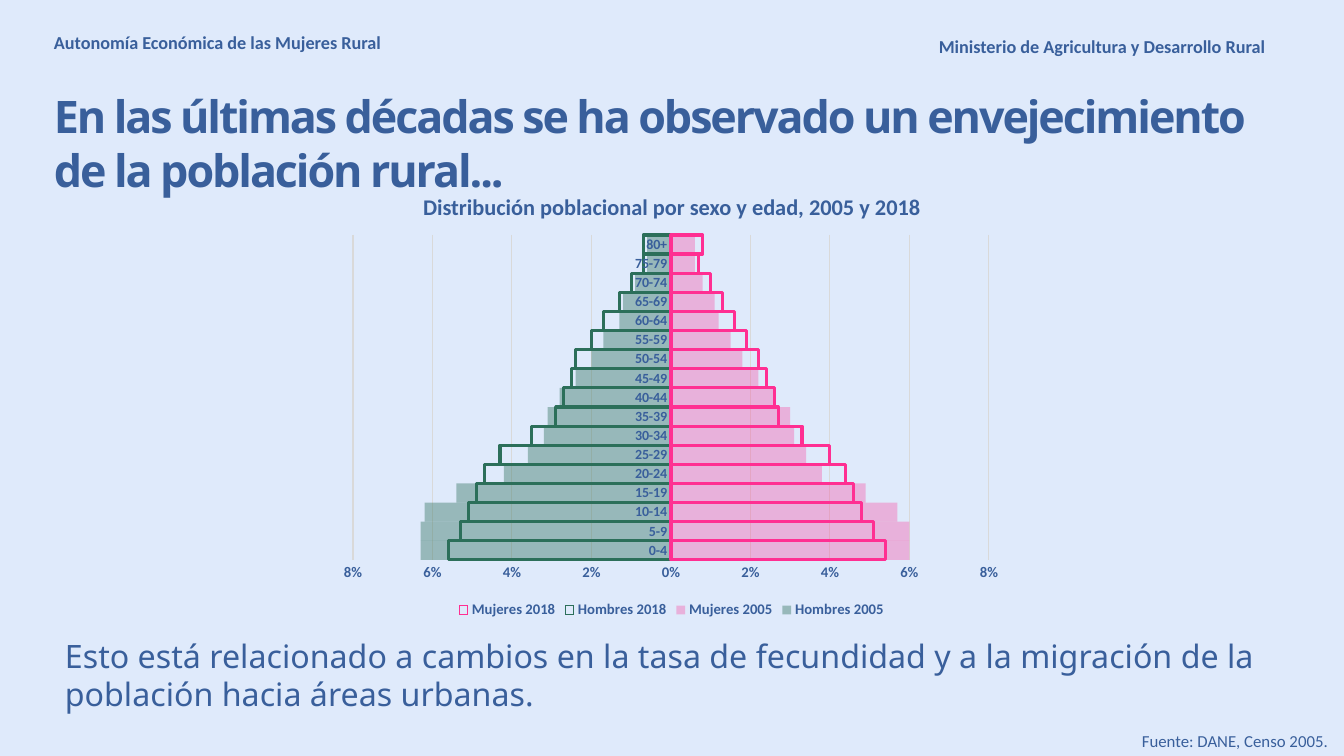
"""Builds a slide with the rural population pyramid for 2005 and 2018."""
from lxml import etree
from pptx import Presentation
from pptx import util as u
from pptx.chart import data as cd
from pptx.dml.color import RGBColor
from pptx.enum import chart as ce, text as te
from pptx.oxml import ns, parse_xml

THEME = {
    "bg": "DFEAFB", "ink": "395F9B", "grid": "D9D9D9", "men": "2C6F5A", "women": "FF2F92",
    "body": "Calibri", "display": "Noto Sans",
    "header": 13, "title": 32, "caption": 16, "message": 23, "source": 12,
    "chart": 10, "axis": 10.5, "outline": 2.25, "hairline": 0.75, "title_spacing": -150,
}
SLIDE = (1344, 756)
CHART = (331, 227, 681, 396)
PLOT = (353, 235, 636, 325)

TEXTS = [
    {"text": "Autonomía Económica de las Mujeres Rural",
     "box": (44, 26, 370, 32), "size": "header", "bold": True},
    {"text": "Ministerio de Agricultura y Desarrollo Rural",
     "box": (929, 30, 352, 32), "size": "header", "bold": True, "wrap": False},
    {"text": "En las últimas décadas se ha observado un envejecimiento de la población rural...",
     "box": (44, 84, 1225, 119), "size": "title", "font": "display", "bold": True,
     "spacing": "title_spacing"},
    {"text": "Distribución poblacional por sexo y edad, 2005 y 2018",
     "box": (359, 188, 626, 37), "size": "caption", "bold": True,
     "align": te.PP_ALIGN.CENTER},
    {"text": "Esto está relacionado a cambios en la tasa de fecundidad y a la migración "
             "de la población hacia áreas urbanas.",
     "box": (55, 631, 1226, 89), "size": "message", "font": "display"},
    {"text": "Fuente: DANE, Censo 2005.", "box": (1132, 726, 212, 30), "size": "source"},
]

AGES = [f"{a}-{a + 4}" for a in range(0, 80, 5)] + ["80+"]
SERIES = [
    ("Hombres 2005", "men", 40, [-6.3, -6.3, -6.2, -5.4, -4.2, -3.6, -3.2, -3.1, -2.8,
                                 -2.4, -2.0, -1.7, -1.3, -1.2, -0.9, -0.6, -0.6]),
    ("Mujeres 2005", "women", 30, [6.0, 6.0, 5.7, 4.9, 3.8, 3.4, 3.1, 3.0, 2.6,
                                   2.2, 1.8, 1.5, 1.2, 1.1, 0.8, 0.6, 0.6]),
    ("Hombres 2018", "men", None, [-5.6, -5.3, -5.1, -4.9, -4.7, -4.3, -3.5, -2.9, -2.7,
                                   -2.5, -2.4, -2.0, -1.7, -1.3, -1.0, -0.7, -0.7]),
    ("Mujeres 2018", "women", None, [5.4, 5.1, 4.8, 4.6, 4.4, 4.0, 3.3, 2.7, 2.6,
                                     2.4, 2.2, 1.9, 1.6, 1.3, 1.0, 0.7, 0.8]),
]


def px(n):
    return u.Emu(round(n * 914400 / 100.8))


def color(key):
    return RGBColor.from_string(THEME[key])


def style(font, size, bold=False, face="body"):
    font.name, font.size, font.bold = THEME[face], u.Pt(THEME[size]), bold
    font.color.rgb = color("ink")


def add_text(s, item):
    tf = s.shapes.add_textbox(*map(px, item["box"])).text_frame
    tf.word_wrap = item.get("wrap", True)
    tf.auto_size = te.MSO_AUTO_SIZE.SHAPE_TO_FIT_TEXT
    p = tf.paragraphs[0]
    p.text = item["text"]
    p.alignment = item.get("align", te.PP_ALIGN.LEFT)
    r = p.runs[0]
    style(r.font, item["size"], item.get("bold", False), item.get("font", "body"))
    if "spacing" in item:
        r.font._element.set("spc", str(THEME[item["spacing"]]))


def style_series(ser, key, alpha):
    ser.invert_if_negative = False
    if alpha is None:
        ser.format.fill.background()
        ser.format.line.color.rgb = color(key)
        ser.format.line.width = u.Pt(THEME["outline"])
        return
    ser.format.fill.solid()
    ser.format.fill.fore_color.rgb = color(key)
    ser.format.line.fill.background()
    fill = ser.format.fill._xPr.find(ns.qn("a:solidFill"))
    etree.SubElement(fill[0], ns.qn("a:alpha")).set("val", str(alpha * 1000))


def place_plot(chart):
    x, y = [(PLOT[i] - CHART[i]) / CHART[i + 2] for i in (0, 1)]
    w, h = [PLOT[i] / CHART[i] for i in (2, 3)]
    sizes = "".join(f'<c:{k} val="{v:.4f}"/>' for k, v in zip("xywh", (x, y, w, h)))
    layout = parse_xml(
        f'<c:layout {ns.nsdecls("c")}><c:manualLayout><c:layoutTarget val="inner"/>'
        f'<c:xMode val="edge"/><c:yMode val="edge"/>{sizes}</c:manualLayout></c:layout>')
    area = chart._chartSpace.chart.plotArea
    for old in area.findall(ns.qn("c:layout")):
        area.remove(old)
    area.insert(0, layout)


def add_pyramid(s):
    data = cd.CategoryChartData(number_format="0%;0%")
    data.categories = AGES
    for name, _, _, percents in SERIES:
        data.add_series(name, [round(v / 100, 3) for v in percents])
    chart = s.shapes.add_chart(
        ce.XL_CHART_TYPE.BAR_CLUSTERED, *map(px, CHART), data).chart
    style(chart.font, "chart")
    chart.has_title = False
    chart.has_legend = True
    chart.legend.position = ce.XL_LEGEND_POSITION.BOTTOM
    chart.legend.include_in_layout = False
    style(chart.legend.font, "axis", True)
    plot = chart.plots[0]
    plot.gap_width, plot.overlap, plot.vary_by_categories = 0, 100, False
    for ser, (_, key, alpha, _) in zip(plot.series, SERIES):
        style_series(ser, key, alpha)
    for axis, size in ((chart.category_axis, "chart"), (chart.value_axis, "axis")):
        axis.major_tick_mark = axis.minor_tick_mark = ce.XL_TICK_MARK.NONE
        axis.format.line.fill.background()
        style(axis.tick_labels.font, size, True)
    chart.category_axis.has_major_gridlines = False
    values = chart.value_axis
    values.minimum_scale, values.maximum_scale, values.major_unit = -0.08, 0.08, 0.02
    values.tick_labels.number_format = "0%;0%"
    values.tick_labels.number_format_is_linked = False
    values.has_major_gridlines = True
    values.major_gridlines.format.line.color.rgb = color("grid")
    values.major_gridlines.format.line.width = u.Pt(THEME["hairline"])
    place_plot(chart)


def main():
    prs = Presentation()
    prs.slide_width, prs.slide_height = map(px, SLIDE)
    s = prs.slides.add_slide(prs.slide_layouts[6])
    s.background.fill.solid()
    s.background.fill.fore_color.rgb = color("bg")
    add_pyramid(s)
    for item in TEXTS:
        add_text(s, item)
    prs.save("out.pptx")


if __name__ == "__main__":
    main()
